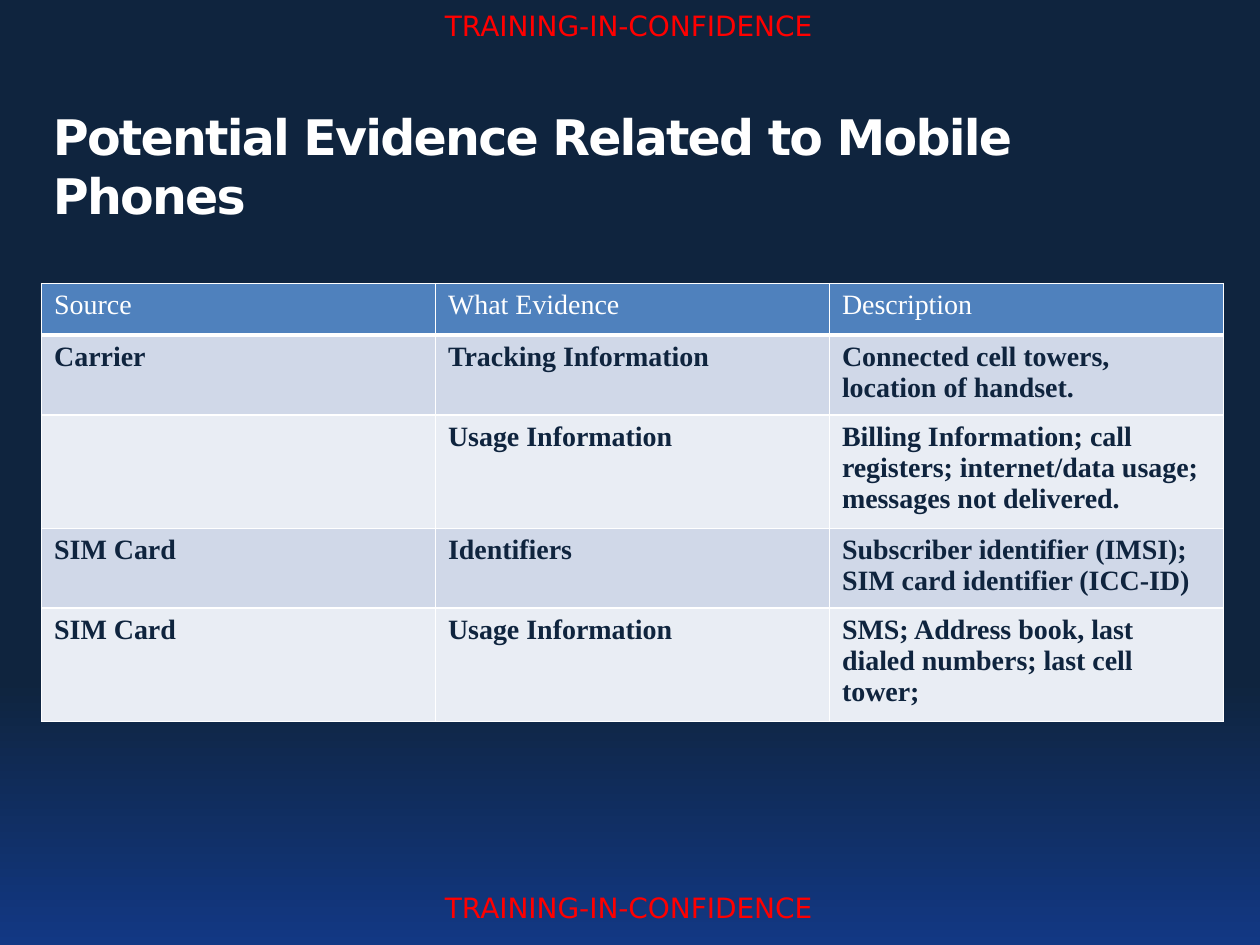
"""Build the slide on potential evidence related to mobile phones."""
from typing import NamedTuple

from lxml.etree import SubElement
from pptx import Presentation
from pptx.dml.color import RGBColor
from pptx.enum.text import MSO_ANCHOR, MSO_AUTO_SIZE, PP_ALIGN
from pptx.oxml.ns import qn
from pptx.util import Inches, Pt

COLORS = {
    "navy": "0F243E",
    "blue": "123884",
    "red": "FF0000",
    "white": "FFFFFF",
    "header": "4F81BD",
    "odd": "D0D8E8",
    "even": "E9EDF4",
}
SANS, SERIF = "DejaVu Sans", "Times New Roman"


class Marking(NamedTuple):
    top: float
    height: float


class Evidence(NamedTuple):
    source: str
    what: str
    description: str
    height: float = 0.41


MARKINGS = [Marking(0.02, 0.71), Marking(7.02, 0.37)]
ROWS = [
    Evidence("Source", "What Evidence", "Description"),
    Evidence("Carrier", "Tracking Information",
             "Connected cell towers, location of handset."),
    Evidence("", "Usage Information",
             "Billing Information; call registers; internet/data usage; "
             "messages not delivered.", 0.52),
    Evidence("SIM Card", "Identifiers",
             "Subscriber identifier (IMSI); SIM card identifier (ICC-ID)"),
    Evidence("SIM Card", "Usage Information",
             "SMS; Address book, last dialed numbers; last cell tower;"),
]


def rgb(name: str) -> RGBColor:
    return RGBColor.from_string(COLORS[name])


def set_font(p, name: str, size: float, color: str, bold: bool = False) -> None:
    for r in p.runs:
        r.font.name, r.font.size, r.font.bold = name, Pt(size), bold
        r.font.color.rgb = rgb(color)


def set_background(s) -> None:
    fill = s.background.fill
    fill.gradient()
    fill.gradient_angle = 270
    for stop, color, position in zip(fill.gradient_stops, ("navy", "blue"), (0.72, 1)):
        stop.color.rgb = rgb(color)
        stop.position = position


def add_marking(s, marking: Marking) -> None:
    sp = s.shapes.add_textbox(Inches(3.33), Inches(marking.top),
                              Inches(3.32), Inches(marking.height))
    tf = sp.text_frame
    tf.word_wrap = False
    tf.auto_size = MSO_AUTO_SIZE.SHAPE_TO_FIT_TEXT
    p = tf.paragraphs[0]
    p.text = "TRAINING-IN-CONFIDENCE"
    p.alignment = PP_ALIGN.CENTER
    set_font(p, SANS, 16, "red")


def set_title(s, text: str) -> None:
    sp = s.shapes.title
    sp.left, sp.top, sp.width, sp.height = map(Inches, (0.42, 0.82, 9.2, 0.96))
    tf = sp.text_frame
    tf.text = text
    tf.word_wrap = True
    tf.auto_size = MSO_AUTO_SIZE.NONE
    tf.vertical_anchor = MSO_ANCHOR.BOTTOM
    tf.margin_left = tf.margin_top = tf.margin_right = tf.margin_bottom = 0
    p = tf.paragraphs[0]
    p.alignment = PP_ALIGN.LEFT
    set_font(p, SANS, 28, "white", bold=True)
    p.runs[0].font._element.set("spc", "-100")


def set_borders(cell, bottom: float) -> None:
    tc_pr = cell._tc.get_or_add_tcPr()
    for side, width in (("L", 1), ("R", 1), ("T", 1), ("B", bottom)):
        ln = SubElement(tc_pr, qn(f"a:ln{side}"), w=str(Pt(width)))
        fill = SubElement(ln, qn("a:solidFill"))
        SubElement(fill, qn("a:srgbClr"), val=COLORS["white"])


def add_evidence_table(s, rows: list[Evidence]) -> None:
    height = sum(row.height for row in rows)
    table = s.shapes.add_table(len(rows), 3, Inches(0.33), Inches(2.25),
                               Inches(9.38), Inches(height)).table
    for i, row in enumerate(rows):
        table.rows[i].height = Inches(row.height)
        is_header = i == 0
        fill = "header" if is_header else "odd" if i % 2 else "even"
        for cell, text in zip(table.rows[i].cells, row[:3]):
            set_borders(cell, bottom=3 if is_header else 1)
            cell.fill.solid()
            cell.fill.fore_color.rgb = rgb(fill)
            p = cell.text_frame.paragraphs[0]
            p.font.size = Pt(16)
            if text:
                p.text = text
                set_font(p, SERIF, 16, "white" if is_header else "navy",
                         bold=not is_header)


def main() -> None:
    prs = Presentation()
    prs.slide_width, prs.slide_height = Inches(10), Inches(7.5)
    s = prs.slides.add_slide(prs.slide_layouts[5])
    set_background(s)
    for marking in MARKINGS:
        add_marking(s, marking)
    set_title(s, "Potential Evidence Related to Mobile Phones")
    add_evidence_table(s, ROWS)
    prs.save("out.pptx")


if __name__ == "__main__":
    main()
